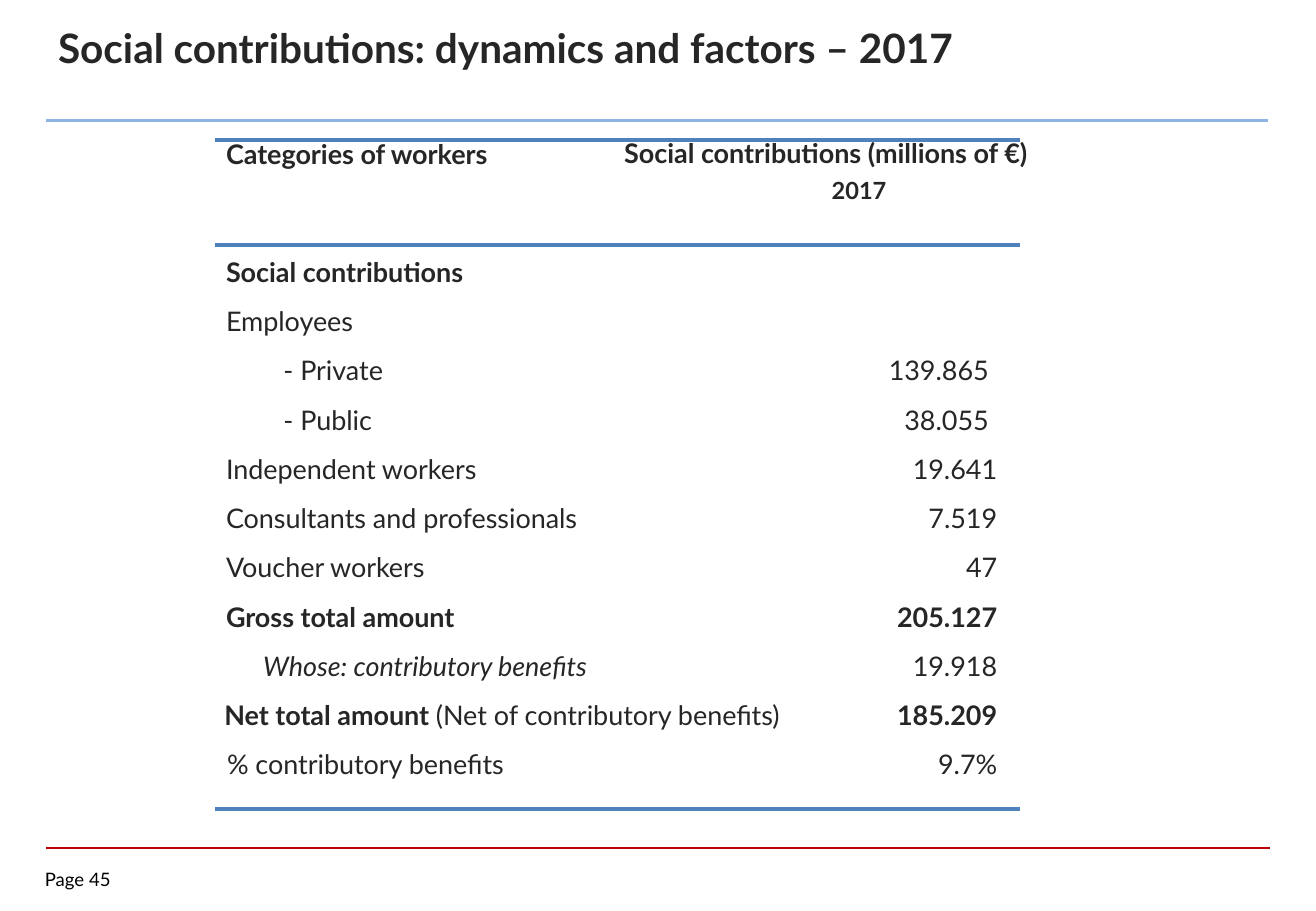
from lxml import etree
from pptx import Presentation
from pptx.dml.color import RGBColor
from pptx.enum.shapes import MSO_CONNECTOR
from pptx.enum.text import MSO_ANCHOR, PP_ALIGN
from pptx.oxml.ns import qn
from pptx.util import Pt

FONT = "Lato"
COLORS = {"text": "262626", "page": "000000", "title_rule": "8EB4E3",
          "footer_rule": "C00000", "table_rule": "4F81BD"}
NO_STYLE = "{2D5ABB26-0587-4C30-8999-92F81FD0307C}"

# Table geometry in points
LEFT, TOP = 127.4, 81.3
COLUMNS = [222.6, 120, 139.2]
HEADER_H, ROW_H, LAST_ROW_H = 64.6, 29.2, 42.1
LABEL_PAD, VALUE_PAD, ROW_PAD = 6.6, 18.1, 5.8
RULE_RIGHT, RULE_YS = 604.8, [82.8, 145.4, 479.5]

# Label runs (text, style), label indent, value, value style, extra right pad
ROWS = [
    ([("Social contributions", "b")], 0, "", "", 0),
    ([("Employees", "")], 0, "", "", 0),
    ([("- Private", "")], 34, "139.865", "", 5),
    ([("- Public", "")], 34, "38.055", "", 5),
    ([("Independent workers", "")], 0, "19.641", "", 0),
    ([("Consultants and professionals", "")], 0, "7.519", "", 0),
    ([("Voucher workers", "")], 0, "47", "", 0),
    ([("Gross total amount", "b")], 0, "205.127", "b", 0),
    ([("Whose: contributory benefits", "i")], 22, "19.918", "", 0),
    ([("Net total amount ", "b"), ("(Net of contributory benefits)", "")],
     -1, "185.209", "b", 0),
    ([("% contributory benefits", "")], 0.6, "9.7%", "", 0),
]


def add_run(p, text, size=16, style="", color="text"):
    r = p.add_run()
    r.text = text
    font = r.font
    font.name, font.size = FONT, Pt(size)
    font.bold, font.italic = style == "b", style == "i"
    font.color.rgb = RGBColor.from_string(COLORS[color])


def add_text(s, x, y, w, h, text, size, style="", color="text"):
    tf = s.shapes.add_textbox(Pt(x), Pt(y), Pt(w), Pt(h)).text_frame
    tf.word_wrap = True
    tf.margin_left = tf.margin_right = tf.margin_top = tf.margin_bottom = 0
    add_run(tf.paragraphs[0], text, size, style, color)


def add_rule(s, x1, x2, y, color, width):
    line = s.shapes.add_connector(MSO_CONNECTOR.STRAIGHT,
                                  Pt(x1), Pt(y), Pt(x2), Pt(y))
    line.line.color.rgb = RGBColor.from_string(COLORS[color])
    line.line.width = Pt(width)
    etree.SubElement(line._element.spPr, qn("a:effectLst"))


def fill_cell(cell, runs, left=0, right=0, top=ROW_PAD, align=PP_ALIGN.LEFT):
    cell.margin_left, cell.margin_right = Pt(left), Pt(right)
    cell.margin_top = Pt(top)
    p = cell.text_frame.paragraphs[0]
    p.alignment = align
    for text, style in runs:
        add_run(p, text, style=style)


def add_contributions_table(s):
    height = HEADER_H + ROW_H * (len(ROWS) - 1) + LAST_ROW_H
    table = s.shapes.add_table(len(ROWS) + 1, len(COLUMNS), Pt(LEFT), Pt(TOP),
                               Pt(sum(COLUMNS)), Pt(height)).table
    table.first_row = table.horz_banding = False
    table._tbl.tblPr.find(qn("a:tableStyleId")).text = NO_STYLE
    for column, width in zip(table.columns, COLUMNS):
        column.width = Pt(width)
    for row in table.rows:
        row.height = Pt(ROW_H)
    table.rows[0].height = Pt(HEADER_H)
    table.rows[len(ROWS)].height = Pt(LAST_ROW_H)
    for cell in table.iter_cells():
        cell.fill.background()
        cell.vertical_anchor = MSO_ANCHOR.TOP
        cell.margin_top = cell.margin_bottom = 0

    # Header: the value heading spans the last two columns
    heading = table.cell(0, 1)
    heading.merge(table.cell(0, 2))
    fill_cell(table.cell(0, 0), [("Categories of workers", "b")],
              left=LABEL_PAD, top=0.4)
    fill_cell(heading, [("Social contributions (millions of €)", "b")],
              top=0, align=PP_ALIGN.RIGHT)
    year = heading.text_frame.add_paragraph()
    year.alignment = PP_ALIGN.CENTER
    year.space_before = Pt(3.9)
    year._p.get_or_add_pPr().set("marL", str(Pt(59.3)))
    add_run(year, "2017", 14, "b")

    # Body: each label spans the first two columns
    for i, (label, indent, value, style, pad) in enumerate(ROWS, 1):
        table.cell(i, 0).merge(table.cell(i, 1))
        fill_cell(table.cell(i, 0), label, left=LABEL_PAD + indent)
        if value:
            fill_cell(table.cell(i, 2), [(value, style)],
                      right=VALUE_PAD + pad, align=PP_ALIGN.RIGHT)

    # Rules above and below the header, and below the last row
    for y in RULE_YS:
        add_rule(s, LEFT, RULE_RIGHT, y, "table_rule", 2.25)


def main():
    prs = Presentation()
    prs.slide_width, prs.slide_height = Pt(780), Pt(540)
    s = prs.slides.add_slide(prs.slide_layouts[6])

    # Title
    add_text(s, 34.4, 13.7, 594, 51,
             "Social contributions: dynamics and factors – 2017", 24, "b")
    add_rule(s, 27.2, 751.7, 71.3, "title_rule", 1.5)

    add_contributions_table(s)

    # Footer
    add_rule(s, 27.4, 752.8, 502.6, "footer_rule", 1)
    add_text(s, 26.6, 514.6, 52.6, 15.8, "Page 45", 11, color="page")

    prs.save("out.pptx")


if __name__ == "__main__":
    main()
